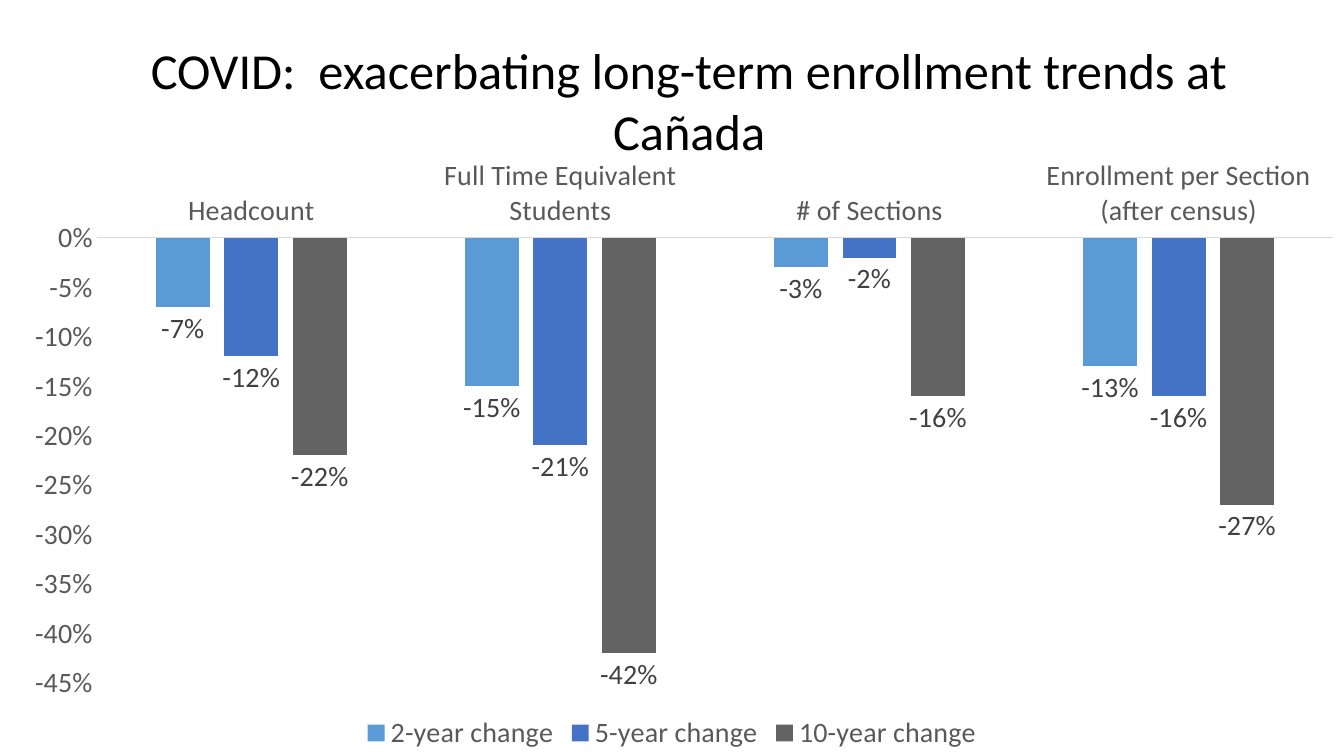
from lxml import etree
from pptx import Presentation
from pptx.chart.data import CategoryChartData
from pptx.dml.color import RGBColor
from pptx.enum.chart import (XL_CHART_TYPE, XL_LABEL_POSITION as LabelPosition,
                             XL_LEGEND_POSITION, XL_TICK_LABEL_POSITION as TickLabels,
                             XL_TICK_MARK)
from pptx.enum.text import MSO_ANCHOR, MSO_AUTO_SIZE, PP_ALIGN
from pptx.oxml.ns import qn
from pptx.util import Inches, Pt

BLACK = RGBColor(0x00, 0x00, 0x00)
LABEL_GREY = RGBColor(0x40, 0x40, 0x40)
AXIS_GREY = RGBColor(0x59, 0x59, 0x59)
LINE_GREY = RGBColor(0xD9, 0xD9, 0xD9)
LIGHT_BLUE = RGBColor(0x5B, 0x9B, 0xD5)
BLUE = RGBColor(0x44, 0x72, 0xC4)
DARK_GREY = RGBColor(0x63, 0x63, 0x63)

FONT = "Calibri"
TITLE = "COVID:  exacerbating long-term enrollment trends at Cañada"
MEASURES = ["Headcount", "Full Time Equivalent Students", "# of Sections",
            "Enrollment per Section (after census)"]
CHANGES = [
    ("2-year change", (-0.07, -0.15, -0.03, -0.13), LIGHT_BLUE),
    ("5-year change", (-0.12, -0.21, -0.02, -0.16), BLUE),
    ("10-year change", (-0.22, -0.42, -0.16, -0.27), DARK_GREY),
]


def set_font(font, size, color):
    """Apply the slide's typeface with a size and colour."""
    font.name, font.size, font.bold = FONT, Pt(size), False
    font.color.rgb = color


def place_plot(chart, x, y, width, height):
    """Fix the inner plot area as fractions of the chart."""
    plot_area = chart._chartSpace.find(".//" + qn("c:plotArea"))
    for old in plot_area.findall(qn("c:layout")):
        plot_area.remove(old)
    layout = etree.Element(qn("c:layout"))
    manual = etree.SubElement(layout, qn("c:manualLayout"))
    settings = {"layoutTarget": "inner", "xMode": "edge", "yMode": "edge",
                "x": x, "y": y, "w": width, "h": height}
    for name, value in settings.items():
        etree.SubElement(manual, qn(f"c:{name}")).set("val", str(value))
    plot_area.insert(0, layout)


def format_axes(chart):
    """Style the measures along the top and the percentages at the left."""
    for axis in (chart.category_axis, chart.value_axis):
        axis.major_tick_mark = axis.minor_tick_mark = XL_TICK_MARK.NONE
        axis.has_major_gridlines = False
        set_font(axis.tick_labels.font, 20, AXIS_GREY)
    measures, percent = chart.category_axis, chart.value_axis
    measures.tick_label_position = TickLabels.HIGH
    measures.format.line.color.rgb = LINE_GREY
    measures.format.line.width = Pt(0.75)
    percent.minimum_scale, percent.maximum_scale = -0.45, 0
    percent.major_unit = 0.05
    percent.format.line.fill.background()
    percent.tick_labels.number_format = "0%"
    percent.tick_labels.number_format_is_linked = False


def format_bars(chart):
    """Colour each series and label its bars."""
    plot = chart.plots[0]
    plot.gap_width, plot.overlap, plot.vary_by_categories = 219, -27, False
    for series, (_, _, color) in zip(plot.series, CHANGES):
        series.invert_if_negative = False
        series.format.fill.solid()
        series.format.fill.fore_color.rgb = color
        labels = series.data_labels
        labels.show_value = True
        labels.position = LabelPosition.OUTSIDE_END
        labels.number_format, labels.number_format_is_linked = "0%", False
        set_font(labels.font, 20, LABEL_GREY)


def add_enrollment_chart(page, left, top, width, height):
    """Add the clustered columns of enrollment change."""
    data = CategoryChartData(number_format="0%")
    data.categories = MEASURES
    for name, values, _ in CHANGES:
        data.add_series(name, values)
    chart = page.shapes.add_chart(XL_CHART_TYPE.COLUMN_CLUSTERED,
                                  left, top, width, height, data).chart
    chart.has_title = False
    set_font(chart.font, 20, BLACK)
    chart.has_legend = True
    chart.legend.position = XL_LEGEND_POSITION.BOTTOM
    chart.legend.include_in_layout = False
    set_font(chart.legend.font, 20, AXIS_GREY)
    format_axes(chart)
    format_bars(chart)
    place_plot(chart, 0.072, 0.292, 0.92, 0.608)


def add_title(page, left, top, width, height):
    """Fill the title placeholder, centred and starting at the box top."""
    title = page.shapes.title
    title.left, title.top, title.width, title.height = left, top, width, height
    frame = title.text_frame
    frame.text = TITLE
    frame.word_wrap = True
    frame.auto_size = MSO_AUTO_SIZE.NONE
    frame.vertical_anchor = MSO_ANCHOR.TOP
    frame.margin_left = frame.margin_right = Inches(0.4)
    para = frame.paragraphs[0]
    para.alignment = PP_ALIGN.CENTER
    set_font(para.font, 36, BLACK)


def main():
    """Build and save the enrollment slide."""
    deck = Presentation()
    deck.slide_width, deck.slide_height = Inches(13.33), Inches(7.5)
    page = deck.slides.add_slide(deck.slide_layouts[5])
    chart_top = Inches(0.24)
    add_enrollment_chart(page, 0, chart_top, deck.slide_width,
                         deck.slide_height - chart_top)
    add_title(page, Inches(0.59), Inches(0.34), Inches(12.49), Inches(1.01))
    deck.save("out.pptx")


if __name__ == "__main__":
    main()
